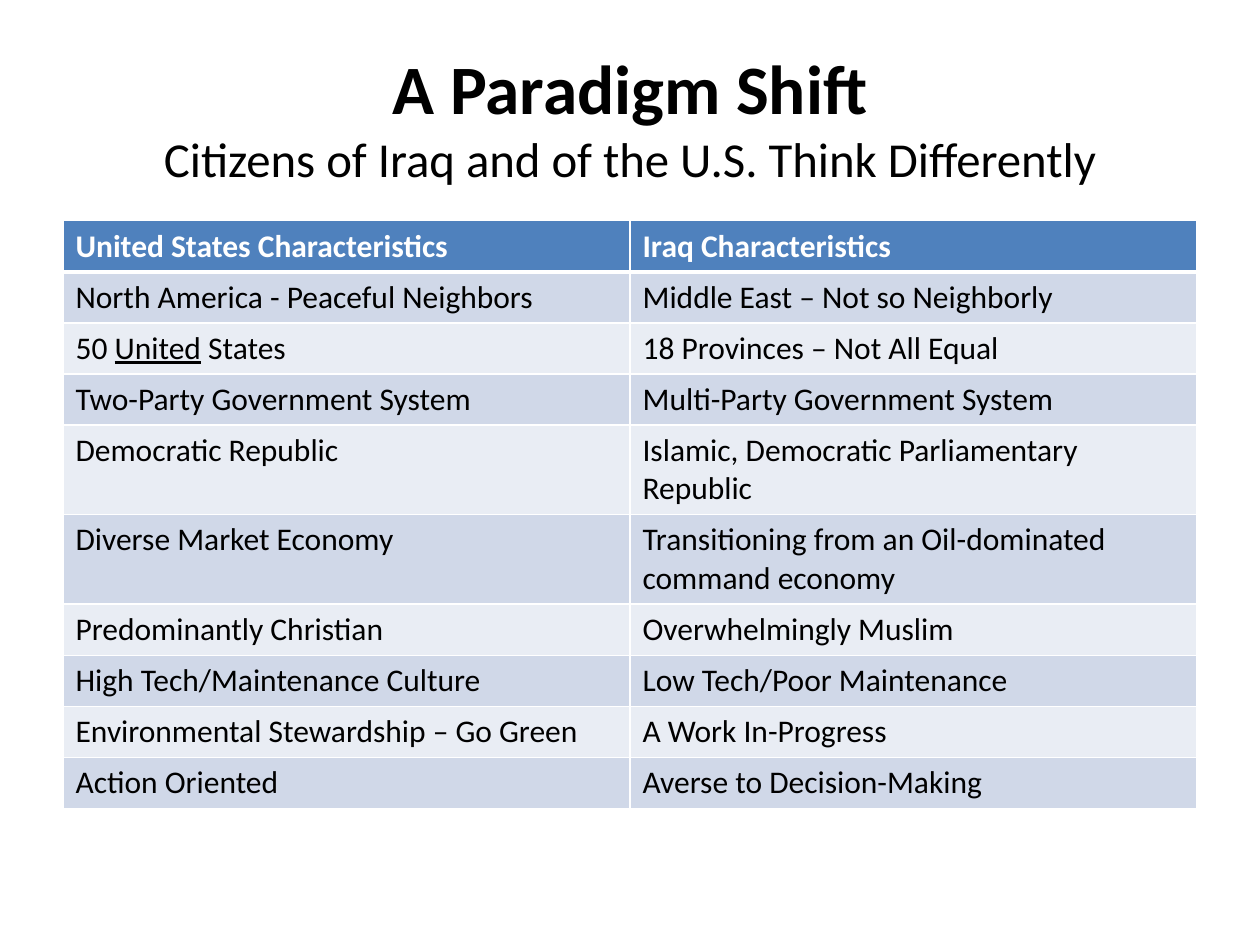
from lxml import etree
from pptx import Presentation
from pptx.dml.color import RGBColor
from pptx.enum.text import MSO_ANCHOR, MSO_AUTO_SIZE, PP_ALIGN
from pptx.oxml.ns import qn
from pptx.util import Cm, Pt

CENTER = PP_ALIGN.CENTER
MIDDLE = MSO_ANCHOR.MIDDLE
NO_AUTOFIT = MSO_AUTO_SIZE.NONE
FONT = "Calibri"
COLORS = {
    "text": "000000",
    "header_text": "FFFFFF",
    "header": "4F81BD",
    "odd_row": "D0D8E8",
    "even_row": "E9EDF4",
    "border": "FFFFFF",
}
HEADINGS = ("United States Characteristics", "Iraq Characteristics")
COMPARISONS = [
    ("North America - Peaceful Neighbors", "Middle East – Not so Neighborly"),
    ("50 United States", "18 Provinces – Not All Equal"),
    ("Two-Party Government System", "Multi-Party Government System"),
    ("Democratic Republic", "Islamic, Democratic Parliamentary Republic"),
    ("Diverse Market Economy", "Transitioning from an Oil-dominated command economy"),
    ("Predominantly Christian", "Overwhelmingly Muslim"),
    ("High Tech/Maintenance Culture", "Low Tech/Poor Maintenance"),
    ("Environmental Stewardship – Go Green", "A Work In-Progress"),
    ("Action Oriented", "Averse to Decision-Making"),
]
UNDERLINED = {"50 United States": "United"}


def rgb(name):
    return RGBColor.from_string(COLORS[name])


def place_title(title, left, top, width, height):
    title.left, title.top, title.width, title.height = left, top, width, height
    frame = title.text_frame
    frame.auto_size = NO_AUTOFIT
    frame.word_wrap = True
    frame.vertical_anchor = MIDDLE
    paragraph = frame.paragraphs[0]
    paragraph.alignment = CENTER
    paragraph.font.name = FONT
    paragraph.font.color.rgb = rgb("text")

    heading = paragraph.add_run()
    heading.text = "A Paradigm Shift"
    heading.font.size = Pt(39.6)
    heading.font.bold = True
    paragraph.add_line_break()
    subtitle = paragraph.add_run()
    subtitle.text = "Citizens of Iraq and of the U.S. Think Differently"
    subtitle.font.size = Pt(27.9)
    subtitle.font.bold = False


def set_borders(cell, top, bottom):
    """Draw the four cell borders; top and bottom are widths in points."""
    properties = cell._tc.get_or_add_tcPr()
    widths = {"a:lnL": 1, "a:lnR": 1, "a:lnT": top, "a:lnB": bottom}
    for position, (tag, width) in enumerate(widths.items()):
        line = etree.Element(qn(tag), w=str(Pt(width)))
        fill = etree.SubElement(line, qn("a:solidFill"))
        etree.SubElement(fill, qn("a:srgbClr"), val=COLORS["border"])
        properties.insert(position, line)


def write_cell(cell, text, color, bold):
    paragraph = cell.text_frame.paragraphs[0]
    paragraph.font.name = FONT
    paragraph.font.size = Pt(18)
    paragraph.font.bold = bold
    paragraph.font.color.rgb = rgb(color)
    word = UNDERLINED.get(text)
    parts = text.partition(word) if word else (text,)
    for part in parts:
        run = paragraph.add_run()
        run.text = part
        if part == word:
            run.font.underline = True


def add_comparison_table(slide, left, top, width, row_height):
    rows = [HEADINGS, *COMPARISONS]
    table = slide.shapes.add_table(
        len(rows), len(HEADINGS), left, top, width, row_height * len(rows)
    ).table
    for row_index, texts in enumerate(rows):
        is_header = row_index == 0
        band = "header" if is_header else "odd_row" if row_index % 2 else "even_row"
        for column_index, text in enumerate(texts):
            cell = table.cell(row_index, column_index)
            write_cell(cell, text, "header_text" if is_header else "text", is_header)
            cell.fill.solid()
            cell.fill.fore_color.rgb = rgb(band)
            set_borders(cell, 3 if row_index == 1 else 1, 3 if is_header else 1)


def main():
    presentation = Presentation()
    presentation.slide_width = Cm(25.4)
    presentation.slide_height = Cm(19.05)
    slide = presentation.slides.add_slide(presentation.slide_layouts[5])
    margin = Cm(1.27)
    content_width = presentation.slide_width - 2 * margin
    place_title(slide.shapes.title, margin, Cm(0.76), content_width, Cm(3.18))
    add_comparison_table(slide, margin, Cm(4.45), content_width, Cm(1.03))
    presentation.save("out.pptx")


if __name__ == "__main__":
    main()
